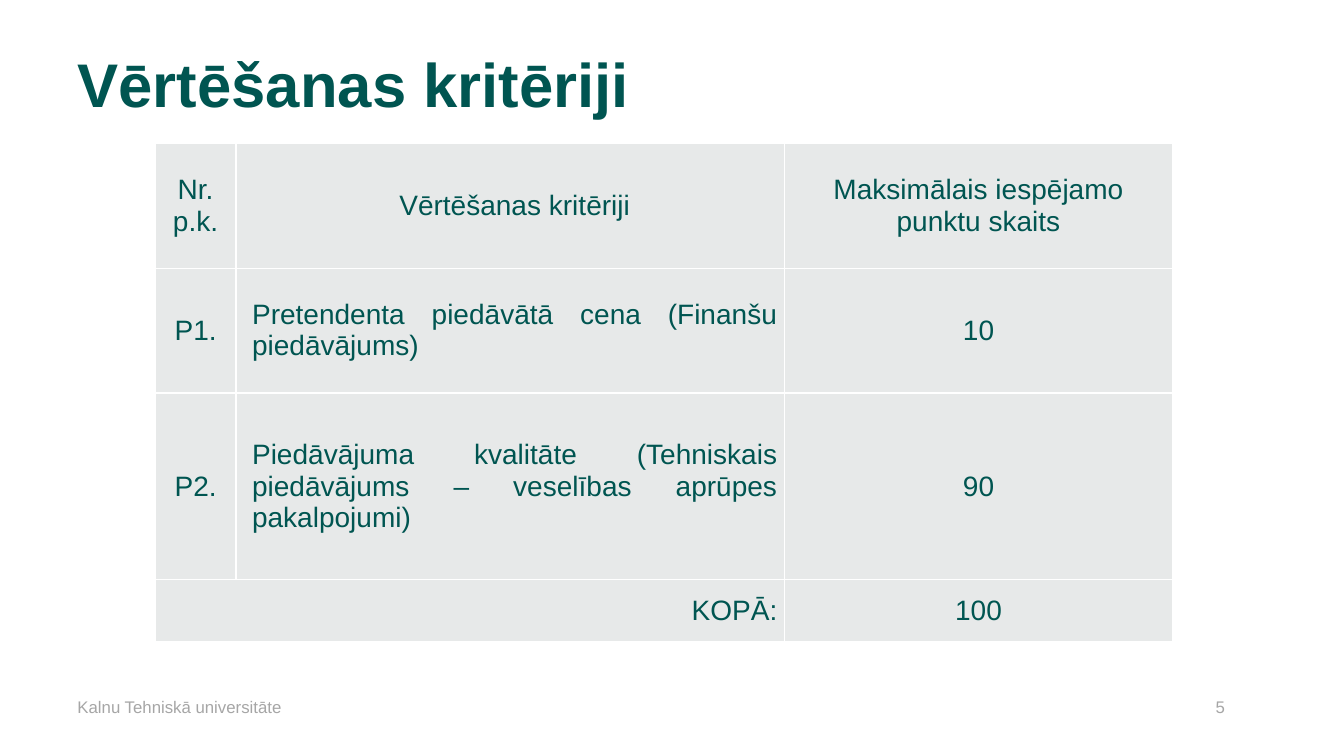
from dataclasses import dataclass

from lxml import etree
from pptx import Presentation
from pptx import util as u
from pptx.dml import color
from pptx.enum import text
from pptx.oxml import ns

GREEN, GREY, PALE, WHITE = "005551", "A6A6A6", "E7E9E9", "FFFFFF"
LEFT, CENTER = text.PP_ALIGN.LEFT, text.PP_ALIGN.CENTER
RIGHT, JUSTIFY = text.PP_ALIGN.RIGHT, text.PP_ALIGN.JUSTIFY
COLUMN_WIDTHS = [0.8, 5.44, 3.85]
ROW_HEIGHTS = [1.24, 1.24, 1.85, 0.62]


@dataclass
class Entry:
    row: int
    column: int
    words: str
    align: text.PP_ALIGN = CENTER
    indent: float = 0


@dataclass
class FooterNote:
    words: str
    left: float
    width: float


ENTRIES = [
    Entry(0, 0, "Nr.\np.k."),
    Entry(0, 1, "Vērtēšanas kritēriji", indent=0.09),
    Entry(0, 2, "Maksimālais iespējamo\npunktu skaits"),
    Entry(1, 0, "P1."),
    Entry(1, 1, "Pretendenta piedāvātā cena (Finanšu piedāvājums)", JUSTIFY, 0.09),
    Entry(1, 2, "10"),
    Entry(2, 0, "P2."),
    Entry(2, 1, "Piedāvājuma kvalitāte (Tehniskais piedāvājums – veselības aprūpes pakalpojumi)",
          JUSTIFY, 0.09),
    Entry(2, 2, "90"),
    Entry(3, 0, "KOPĀ:", RIGHT),
    Entry(3, 2, "100"),
]
FOOTER_NOTES = [
    FooterNote("Kalnu Tehniskā universitāte", 0.67, 3.6),
    FooterNote("5", 11.96, 0.7),
]


def rgb(code: str) -> color.RGBColor:
    return color.RGBColor.from_string(code)


def apply(target, formats: dict) -> None:
    for name, value in formats.items():
        setattr(target, name, value)


def write(frame, words: str, size: float, ink: str, align=LEFT, bold=False) -> None:
    frame.text = words
    for paragraph in frame.paragraphs:
        paragraph.alignment = align
        for run in paragraph.runs:
            apply(run.font, {"name": "Arial", "size": u.Pt(size), "bold": bold})
            run.font.color.rgb = rgb(ink)


def draw_borders(cell) -> None:
    properties = cell._tc.get_or_add_tcPr()
    for position, side in enumerate(("lnL", "lnR", "lnT", "lnB")):
        border = etree.Element(ns.qn(f"a:{side}"), w=str(u.Pt(1)))
        fill = etree.SubElement(border, ns.qn("a:solidFill"))
        etree.SubElement(fill, ns.qn("a:srgbClr"), val=WHITE)
        properties.insert(position, border)


def fill_entry(criteria, entry: Entry) -> None:
    cell = criteria.cell(entry.row, entry.column)
    write(cell.text_frame, entry.words, 20, GREEN, entry.align)
    if entry.indent:
        for paragraph in cell.text_frame.paragraphs:
            paragraph._p.get_or_add_pPr().set("marL", str(u.Inches(entry.indent)))


def add_criteria(slide) -> None:
    criteria = slide.shapes.add_table(
        len(ROW_HEIGHTS), len(COLUMN_WIDTHS), u.Inches(1.54), u.Inches(1.42),
        u.Inches(sum(COLUMN_WIDTHS)), u.Inches(sum(ROW_HEIGHTS))).table
    apply(criteria, {"first_row": False, "horz_banding": False})
    for column, width in zip(criteria.columns, COLUMN_WIDTHS):
        column.width = u.Inches(width)
    for row, height in zip(criteria.rows, ROW_HEIGHTS):
        row.height = u.Inches(height)
    for cell in criteria.iter_cells():
        cell.fill.solid()
        cell.fill.fore_color.rgb = rgb(PALE)
        apply(cell, {"margin_left": u.Inches(0.07), "margin_right": u.Inches(0.07),
                     "margin_top": 0, "margin_bottom": 0,
                     "vertical_anchor": text.MSO_ANCHOR.MIDDLE})
        draw_borders(cell)
    criteria.cell(3, 0).merge(criteria.cell(3, 1))
    for entry in ENTRIES:
        fill_entry(criteria, entry)


def add_heading(slide) -> None:
    heading = slide.shapes.title
    apply(heading, {"left": u.Inches(0.67), "top": u.Inches(0.4),
                    "width": u.Inches(12), "height": u.Inches(0.84)})
    apply(heading.text_frame, {"vertical_anchor": text.MSO_ANCHOR.MIDDLE,
                               "auto_size": text.MSO_AUTO_SIZE.NONE})
    write(heading.text_frame, "Vērtēšanas kritēriji", 44, GREEN, bold=True)


def add_footer_note(slide, note: FooterNote) -> None:
    frame = slide.shapes.add_textbox(
        u.Inches(note.left), u.Inches(6.86), u.Inches(note.width), u.Inches(0.4)).text_frame
    apply(frame, {"word_wrap": True, "vertical_anchor": text.MSO_ANCHOR.TOP})
    write(frame, note.words, 12, GREY)


def main() -> None:
    deck = Presentation()
    apply(deck, {"slide_width": u.Inches(13.33), "slide_height": u.Inches(7.5)})
    slide = deck.slides.add_slide(deck.slide_layouts[5])
    add_heading(slide)
    for note in FOOTER_NOTES:
        add_footer_note(slide, note)
    add_criteria(slide)
    deck.save("out.pptx")


if __name__ == "__main__":
    main()
